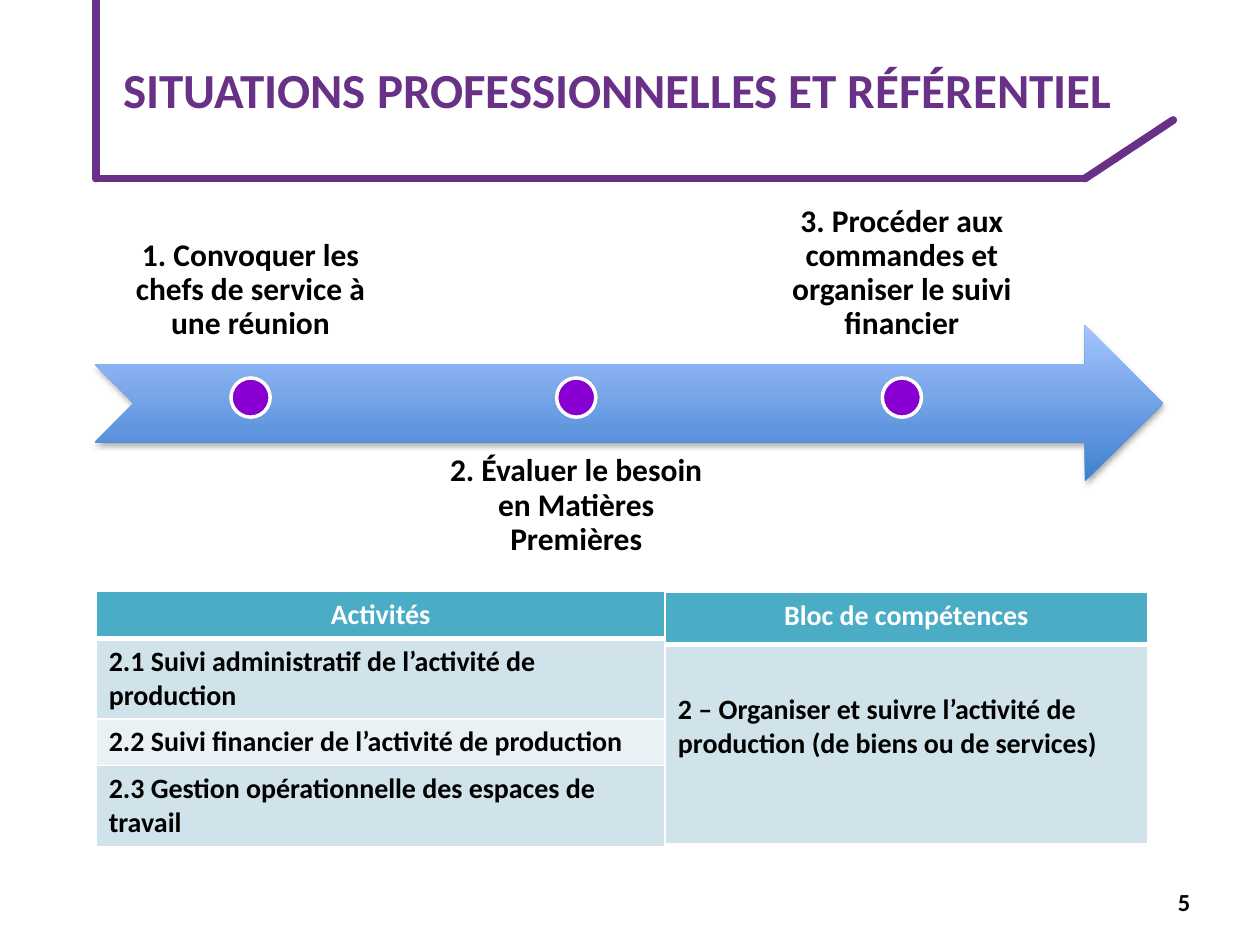
from lxml import etree
from pptx import Presentation
from pptx.dml.color import RGBColor
from pptx.enum import shapes, text
from pptx.oxml import ns
from pptx.util import Pt

PURPLE, BLACK, WHITE = "683086", "000000", "FFFFFF"
TEAL, BAND_DARK, BAND_LIGHT = "4BACC6", "D0E3EA", "E9F1F5"
CENTER = text.PP_ALIGN.CENTER
TOP, MIDDLE, BOTTOM = (text.MSO_ANCHOR.TOP, text.MSO_ANCHOR.MIDDLE,
                       text.MSO_ANCHOR.BOTTOM)


def color(value):
    """Turn a hex string into a colour."""
    return RGBColor.from_string(value)


def points(*lengths):
    """Turn numbers into lengths in points."""
    return [Pt(length) for length in lengths]


def add_node(parent, tag, **attributes):
    """Append a drawing element with its attributes."""
    return etree.SubElement(parent, ns.qn(tag), attributes)


def style_text(frame, wording, size, ink, align=None):
    """Write one bold paragraph and return it."""
    frame.text = wording
    paragraph = frame.paragraphs[0]
    paragraph.alignment = align
    font = paragraph.runs[0].font
    font.name, font.size, font.bold = "Calibri", Pt(size), True
    font.color.rgb = color(ink)
    return paragraph


def add_label(slide, box, wording, size, ink=BLACK, align=None, anchor=TOP):
    """Add a wrapping text box and return its frame."""
    frame = slide.shapes.add_textbox(*points(*box)).text_frame
    frame.word_wrap = True
    frame.vertical_anchor = anchor
    style_text(frame, wording, size, ink, align)
    return frame


def add_rule(slide, start, end):
    """Draw one thick line of the title frame with round ends."""
    rule = slide.shapes.add_connector(
        shapes.MSO_CONNECTOR.STRAIGHT, *points(*start, *end))
    rule.line.color.rgb = color(PURPLE)
    rule.line.width = Pt(4.5)
    rule.line._ln.set("cap", "rnd")
    add_node(rule._element.spPr, "a:effectLst")


def add_arrow(slide, box):
    """Draw the shaded timeline arrow with a soft shadow."""
    arrow = slide.shapes.add_shape(
        shapes.MSO_SHAPE.NOTCHED_RIGHT_ARROW, *points(*box))
    arrow.line.fill.background()
    arrow.fill.gradient()
    arrow.fill.gradient_angle = 90
    for stop, (position, shade) in zip(arrow.fill.gradient_stops,
                                       ((0, "3F80CE"), (1, "A4C4FF"))):
        stop.position = position
        stop.color.rgb = color(shade)
    arrow.shadow.inherit = False
    effects = arrow._element.spPr.find(ns.qn("a:effectLst"))
    shadow = add_node(effects, "a:outerShdw", blurRad=str(Pt(3.1)),
                      dist=str(Pt(1.8)), dir="5400000", rotWithShape="0")
    tint = add_node(shadow, "a:srgbClr", val=BLACK)
    add_node(tint, "a:alpha", val="35000")


def add_step(slide, left, top, wording, anchor):
    """Add a timeline step: its label and its dot on the arrow."""
    width, dot_size = 177.4, 22.4
    frame = add_label(slide, (left, top, width, 89.3), wording, 18,
                      align=CENTER, anchor=anchor)
    frame.margin_left = frame.margin_right = Pt(10.1)
    frame.margin_top = frame.margin_bottom = Pt(10.1)
    frame.paragraphs[0].line_spacing = 0.9
    dot = slide.shapes.add_shape(
        shapes.MSO_SHAPE.OVAL,
        *points(left + (width - dot_size) / 2, 216, dot_size, dot_size))
    dot.shadow.inherit = False
    dot.fill.solid()
    dot.fill.fore_color.rgb = color("8800D1")
    dot.line.color.rgb = color(WHITE)
    dot.line.width = Pt(2)


def set_borders(cell, top, bottom):
    """Give a cell white borders, with the top and bottom widths given."""
    properties = cell._tc.get_or_add_tcPr()
    for index, (side, width) in enumerate(
            (("L", 1), ("R", 1), ("T", top), ("B", bottom))):
        border = etree.Element(ns.qn(f"a:ln{side}"), w=str(Pt(width)))
        add_node(add_node(border, "a:solidFill"), "a:srgbClr", val=WHITE)
        properties.insert(index, border)


def add_column_table(slide, left, top, width, heights, wordings):
    """Add a one-column table with a header and banded rows."""
    table = slide.shapes.add_table(
        len(wordings), 1, *points(left, top, width, sum(heights))).table
    for index, (height, wording) in enumerate(zip(heights, wordings)):
        table.rows[index].height = Pt(height)
        cell = table.cell(index, 0)
        header = index == 0
        band = BAND_DARK if index % 2 else BAND_LIGHT
        style_text(cell.text_frame, wording, 16, WHITE if header else BLACK,
                   CENTER if header else None)
        cell.fill.solid()
        cell.fill.fore_color.rgb = color(TEAL if header else band)
        set_borders(cell, 3 if index == 1 else 1, 3 if header else 1)
    return table


def main():
    """Build the slide and save it."""
    deck = Presentation()
    deck.slide_width, deck.slide_height = points(720, 540)
    slide = deck.slides.add_slide(deck.slide_layouts[6])

    corner, bend = (54.9, 102), (620, 102)
    add_rule(slide, corner, bend)
    add_rule(slide, bend, (670.4, 68.6))
    add_rule(slide, corner, (54.9, 0))
    add_label(slide, (63.4, 0, 620.6, 101.8),
              "SITUATIONS PROFESSIONNELLES ET RÉFÉRENTIEL", 28, PURPLE,
              anchor=MIDDLE)
    add_label(slide, (666, 503.3, 48.2, 28.8), "5", 14)

    add_arrow(slide, (54, 185.8, 610.6, 89.3))
    steps = (
        ("1. Convoquer les chefs de service à une réunion", 115.9, BOTTOM),
        ("2. Évaluer le besoin en Matières Premières", 249.8, TOP),
        ("3. Procéder aux commandes et organiser le suivi financier",
         115.9, BOTTOM),
    )
    for index, (wording, top, anchor) in enumerate(steps):
        add_step(slide, 54.5 + 186.1 * index, top, wording, anchor)

    skills = add_column_table(
        slide, 380.2, 338.7, 275.4, (29.4, 113.8),
        ("Bloc de compétences",
         "2 – Organiser et suivre l’activité de production "
         "(de biens ou de services)"))
    skill = skills.cell(1, 0)
    skill.vertical_anchor = MIDDLE
    skill.margin_bottom = Pt(23)
    add_column_table(
        slide, 55, 338, 325, (26.7, 46.2, 26.7, 46.2),
        ("Activités",
         "2.1 Suivi administratif de l’activité de production",
         "2.2 Suivi financier de l’activité de production",
         "2.3 Gestion opérationnelle des espaces de travail"))

    deck.save("out.pptx")


if __name__ == "__main__":
    main()
